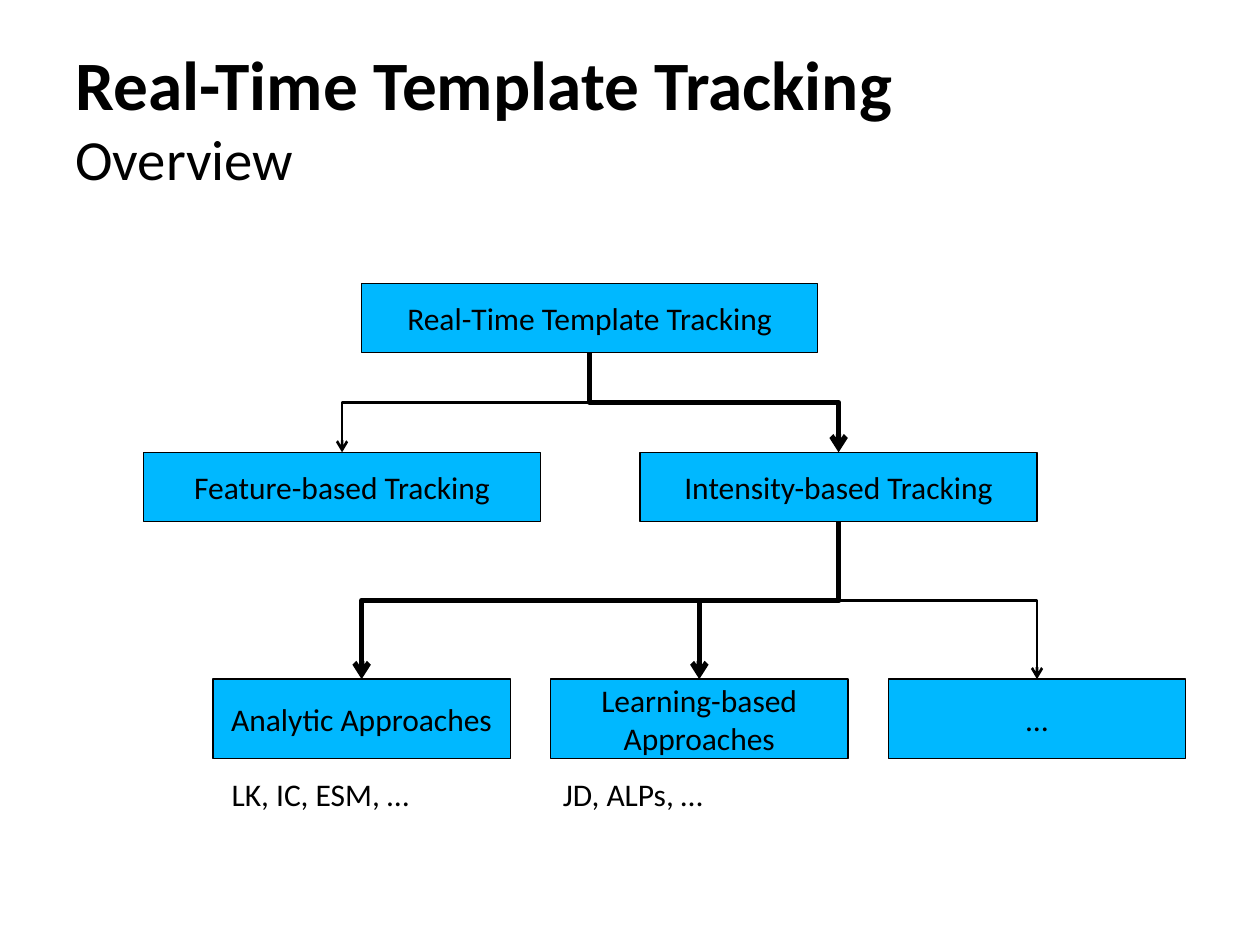
from dataclasses import dataclass

from lxml.etree import SubElement
from pptx import Presentation
from pptx.dml.color import RGBColor
from pptx.enum.shapes import MSO_CONNECTOR, MSO_SHAPE
from pptx.enum.text import MSO_ANCHOR, PP_ALIGN
from pptx.oxml.ns import qn
from pptx.util import Inches, Pt


@dataclass(frozen=True)
class Theme:
    """Colours, font and sizes of the slide."""
    font: str = "Calibri"
    ink: RGBColor = RGBColor(0x00, 0x00, 0x00)
    box_fill: RGBColor = RGBColor(0x00, 0xB8, 0xFF)
    title_size: Pt = Pt(39.6)
    subtitle_size: Pt = Pt(32.4)
    body_size: Pt = Pt(18)
    outline: Pt = Pt(0.75)
    thin: Pt = Pt(1.5)
    thick: Pt = Pt(3)


THEME = Theme()


def style(paragraph, size, bold=False):
    """Set the font of a paragraph."""
    font = paragraph.font
    font.name, font.size, font.bold = THEME.font, size, bold
    font.color.rgb = THEME.ink


def add_title(slide, title, subtitle):
    """Add the bold title with its subtitle."""
    shape = slide.shapes.add_textbox(Inches(0.5), Inches(0.3), Inches(9), Inches(1.25))
    frame = shape.text_frame
    frame.word_wrap = True
    frame.vertical_anchor = MSO_ANCHOR.MIDDLE
    frame.text = f"{title}\n{subtitle}"
    style(frame.paragraphs[0], THEME.title_size, bold=True)
    style(frame.paragraphs[1], THEME.subtitle_size)


def add_box(slide, text, left, top, width, height):
    """Add a filled box with centred text."""
    shape = slide.shapes.add_shape(
        MSO_SHAPE.RECTANGLE, Inches(left), Inches(top), Inches(width), Inches(height))
    shape.shadow.inherit = False
    shape.fill.solid()
    shape.fill.fore_color.rgb = THEME.box_fill
    shape.line.color.rgb = THEME.ink
    shape.line.width = THEME.outline
    frame = shape.text_frame
    frame.word_wrap = True
    frame.vertical_anchor = MSO_ANCHOR.MIDDLE
    paragraph = frame.paragraphs[0]
    paragraph.text = text
    paragraph.alignment = PP_ALIGN.CENTER
    style(paragraph, THEME.body_size)
    return shape


def add_label(slide, text, left, top, width):
    """Add a one-line label."""
    shape = slide.shapes.add_textbox(Inches(left), Inches(top), Inches(width), Inches(0.4))
    shape.text_frame.word_wrap = False
    paragraph = shape.text_frame.paragraphs[0]
    paragraph.text = text
    style(paragraph, THEME.body_size)


def add_branch(slide, parent, child, weight):
    """Join a parent's bottom to a child's top with a vertical-first elbow arrow."""
    connector = slide.shapes.add_connector(MSO_CONNECTOR.ELBOW, 0, 0, 0, 0)
    connector.begin_connect(parent, 2)
    connector.end_connect(child, 0)
    start_x, start_y = parent.left + parent.width // 2, parent.top + parent.height
    end_x, end_y = child.left + child.width // 2, child.top
    drop, reach = end_y - start_y, abs(end_x - start_x)
    connector.left = (start_x + end_x - drop) // 2
    connector.top = (start_y + end_y - reach) // 2
    connector.width, connector.height = drop, reach
    rightward = end_x > start_x
    properties = connector._element.spPr
    transform = properties.find(qn("a:xfrm"))
    transform.set("rot", str((270 if rightward else 90) * 60000))
    transform.set("flipH", "1" if rightward else "0")
    transform.set("flipV", "0")
    connector.line.color.rgb = THEME.ink
    connector.line.width = weight
    SubElement(properties.find(qn("a:ln")), qn("a:tailEnd"), type="arrow")
    SubElement(properties, qn("a:effectLst"))


def main():
    """Build the overview slide."""
    presentation = Presentation()
    presentation.slide_width, presentation.slide_height = Inches(10), Inches(7.5)
    slide = presentation.slides.add_slide(presentation.slide_layouts[6])
    add_title(slide, "Real-Time Template Tracking", "Overview")

    root = add_box(slide, "Real-Time Template Tracking", 2.87, 2.25, 3.62, 0.55)
    feature, intensity = [
        add_box(slide, text, 1.14 + 3.94 * column, 3.59, 3.15, 0.55)
        for column, text in enumerate(("Feature-based Tracking", "Intensity-based Tracking"))]
    analytic, learning, others = [
        add_box(slide, text, 1.69 + 2.68 * column, 5.39, 2.36, 0.63)
        for column, text in enumerate(
            ("Analytic Approaches", "Learning-based Approaches", "…"))]

    add_label(slide, "LK, IC, ESM, …", 1.74, 6.1, 1.69)
    add_label(slide, "JD, ALPs, …", 4.37, 6.1, 1.34)

    for parent, child, weight in (
            (root, feature, THEME.thin),
            (intensity, others, THEME.thin),
            (root, intensity, THEME.thick),
            (intensity, learning, THEME.thick),
            (intensity, analytic, THEME.thick)):
        add_branch(slide, parent, child, weight)

    presentation.save("out.pptx")


if __name__ == "__main__":
    main()
